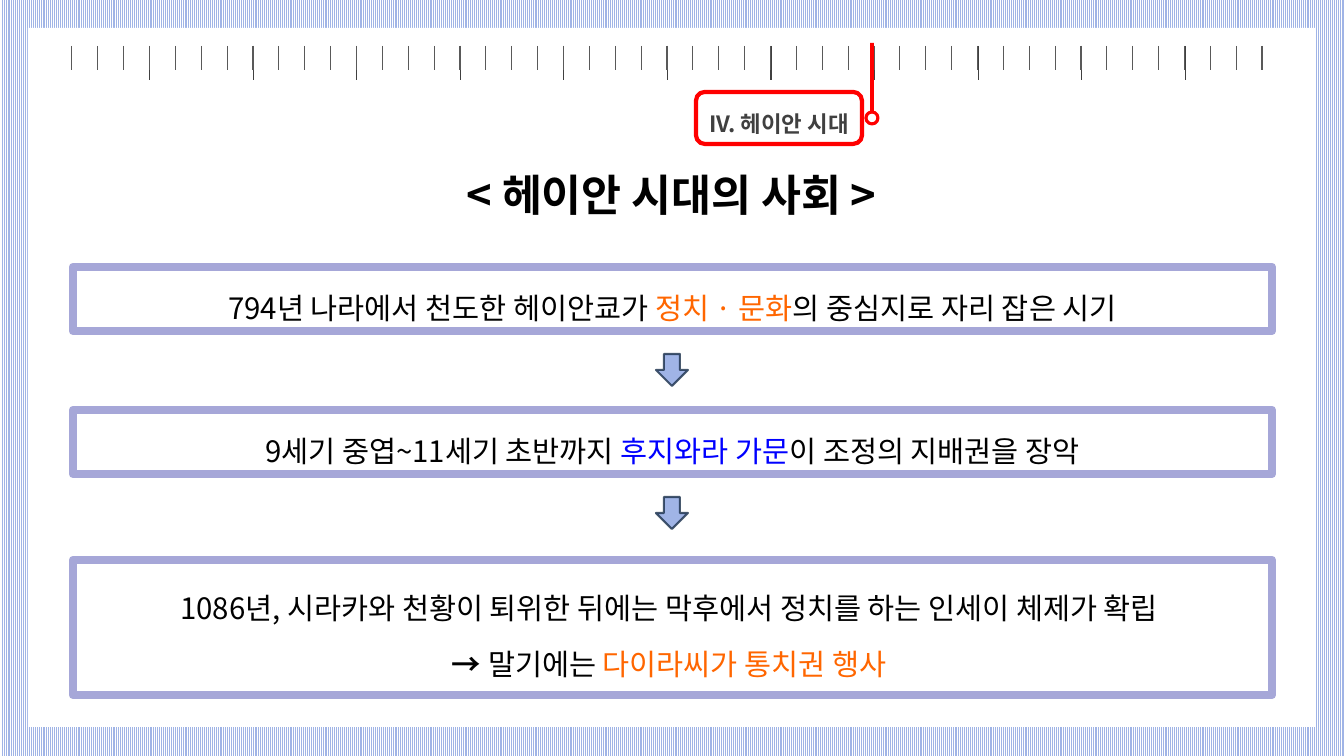
from lxml import etree
from pptx import Presentation
from pptx import util as u
from pptx.dml.color import RGBColor
from pptx.enum import dml, shapes, text
from pptx.oxml import ns

FONT = "Noto Sans CJK KR"
WHITE = RGBColor(0xFF, 0xFF, 0xFF)
BLACK = RGBColor(0, 0, 0)
STRIPE = RGBColor(0xA0, 0xB4, 0xE6)
LILAC = RGBColor(0xA6, 0xA7, 0xD8)
NAVY = RGBColor(0x17, 0x2D, 0x48)
RED = RGBColor(0xFF, 0, 0)
ORANGE = RGBColor(0xFF, 0x66, 0)
BLUE = RGBColor(0, 0, 0xFF)
GREY = RGBColor(0x40, 0x40, 0x40)
TICK_GREY = RGBColor(0x59, 0x59, 0x59)
PLAIN_TABLE = "{2D5ABB26-0587-4C30-8999-92F81FD0307C}"
SHAPE = shapes.MSO_SHAPE


def px(length):
    return round(length * 914400 / 100.8)


def place(box):
    return [px(length) for length in box]


def add_figure(parent, kind, box, fill=None, line=None, width=0):
    figure = parent.shapes.add_shape(kind, *place(box))
    figure.shadow.inherit = False
    if fill is None:
        figure.fill.background()
    else:
        figure.fill.solid()
        figure.fill.fore_color.rgb = fill
    if line is None:
        figure.line.fill.background()
    else:
        figure.line.color.rgb = line
        figure.line.width = u.Pt(width)
    return figure


def write(frame, paragraphs, size, spacing=1.0, side=10):
    frame.word_wrap = True
    frame.vertical_anchor = text.MSO_ANCHOR.TOP
    frame.margin_left = frame.margin_right = px(side)
    for index, spans in enumerate(paragraphs):
        para = frame.paragraphs[0] if index == 0 else frame.add_paragraph()
        para.alignment = text.PP_ALIGN.CENTER
        para.line_spacing = spacing
        for words, color, bold in spans:
            span = para.add_run()
            span.text = words
            span.font.size = u.Pt(size)
            span.font.bold = bold
            span.font.color.rgb = color
            span.font.name = FONT
            east = etree.SubElement(span.font._element, ns.qn("a:ea"))
            east.set("typeface", FONT)


def add_text(page, box, paragraphs, size, spacing, side=10):
    note = page.shapes.add_textbox(*place(box))
    write(note.text_frame, paragraphs, size, spacing, side)


def draw_borders(cell, sides, color):
    properties = cell._tc.get_or_add_tcPr()
    for index, side in enumerate(("L", "R", "T", "B")):
        border = etree.Element(ns.qn("a:ln" + side), w=str(u.Pt(1)))
        if side in sides:
            paint = etree.SubElement(border, ns.qn("a:solidFill"))
            etree.SubElement(paint, ns.qn("a:srgbClr"), val=str(color))
        else:
            etree.SubElement(border, ns.qn("a:noFill"))
        properties.insert(index, border)


def add_ticks(page, box, count, color):
    left, top, width, height = place(box)
    table = page.shapes.add_table(1, count, left, top, width, height).table
    table.first_row = table.horz_banding = False
    table._tbl.tblPr.find(ns.qn("a:tableStyleId")).text = PLAIN_TABLE
    for index, column in enumerate(table.columns):
        column.width = width // count
        cell = table.cell(0, index)
        cell.margin_left = cell.margin_right = 0
        cell.margin_top = cell.margin_bottom = 0
        cell.fill.background()
        sides = ("L" if index > 0 else "") + ("R" if index < count - 1 else "")
        draw_borders(cell, sides, color)
        para = cell.text_frame.paragraphs[0]
        etree.SubElement(para._p, ns.qn("a:endParaRPr"), sz="400")


def add_ruler(page, box):
    left, top, width, height = box
    add_ticks(page, box, 12, GREY)
    add_ticks(page, (left, top, width, height - 10), 48, TICK_GREY)


def add_pointer(page, box):
    left, top, width, height = box
    group = page.shapes.add_group_shape()
    add_figure(group, SHAPE.RECTANGLE, (left + 4, top, 4, height - 9), RED)
    add_figure(group, SHAPE.OVAL, (left, top + height - width, width, width),
               WHITE, RED, 2.25)


def add_label(page, box, words):
    add_figure(page, SHAPE.ROUNDED_RECTANGLE, box, line=RED, width=3)
    add_text(page, box, [[(words, GREY, True)]], 16, 1.5, side=0)


def add_heading(page, box, words):
    title = page.shapes.title
    title.left, title.top, title.width, title.height = place(box)
    write(title.text_frame, [[(words, BLACK, True)]], 31)


def add_statement(page, box, paragraphs, shift):
    left, top, width, height = box
    add_figure(page, SHAPE.RECTANGLE, box, line=LILAC, width=6)
    add_text(page, (left, top + shift, width, height - shift),
             paragraphs, 21, 1.6)


def add_arrow(page, box):
    arrow = add_figure(page, SHAPE.DOWN_ARROW, box, STRIPE, NAVY, 1.5)
    color = arrow.line._ln.find(".//" + ns.qn("a:srgbClr"))
    etree.SubElement(color, ns.qn("a:alpha"), val="78000")


def add_panel(page, box):
    backdrop = page.background.fill
    backdrop.patterned()
    backdrop.pattern = dml.MSO_PATTERN.NARROW_VERTICAL
    backdrop.fore_color.rgb = STRIPE
    backdrop.back_color.rgb = WHITE
    panel = add_figure(page, SHAPE.RECTANGLE, box, WHITE)
    page.shapes.title.element.addprevious(panel.element)


def build_society_page(deck):
    page = deck.slides.add_slide(deck.slide_layouts[5])
    add_panel(page, (28, 28, 1287, 699))
    add_ruler(page, (46, 46, 1243, 34))
    add_pointer(page, (866, 43, 12, 81))
    add_label(page, (696, 92, 166, 52), "IV. 헤이안 시대")
    add_heading(page, (363, 163, 617, 62), "< 헤이안 시대의 사회 >")
    add_statement(page, (73, 267, 1199, 64), [[
        ("794년 나라에서 천도한 헤이안쿄가 ", BLACK, False),
        ("정치 · 문화", ORANGE, False),
        ("의 중심지로 자리 잡은 시기", BLACK, False)]], -3)
    add_statement(page, (73, 410, 1199, 64), [[
        ("9세기 중엽~11세기 초반까지 ", BLACK, False),
        ("후지와라 가문", BLUE, False),
        ("이 조정의 지배권을 장악", BLACK, False)]], -3)
    add_statement(page, (73, 560, 1199, 135), [
        [("1086년, 시라카와 천황이 퇴위한 뒤에는 막후에서 정치를 하는 "
          "인세이 체제가 확립 ", BLACK, False)],
        [("→ ", BLACK, True), ("말기에는 ", BLACK, False),
         ("다이라씨가 통치권 행사 ", ORANGE, False)]], 4)
    for top in (354, 497):
        add_arrow(page, (656, top, 32, 32))


def main():
    deck = Presentation()
    deck.slide_width, deck.slide_height = px(1344), px(756)
    build_society_page(deck)
    deck.save("out.pptx")


if __name__ == "__main__":
    main()
